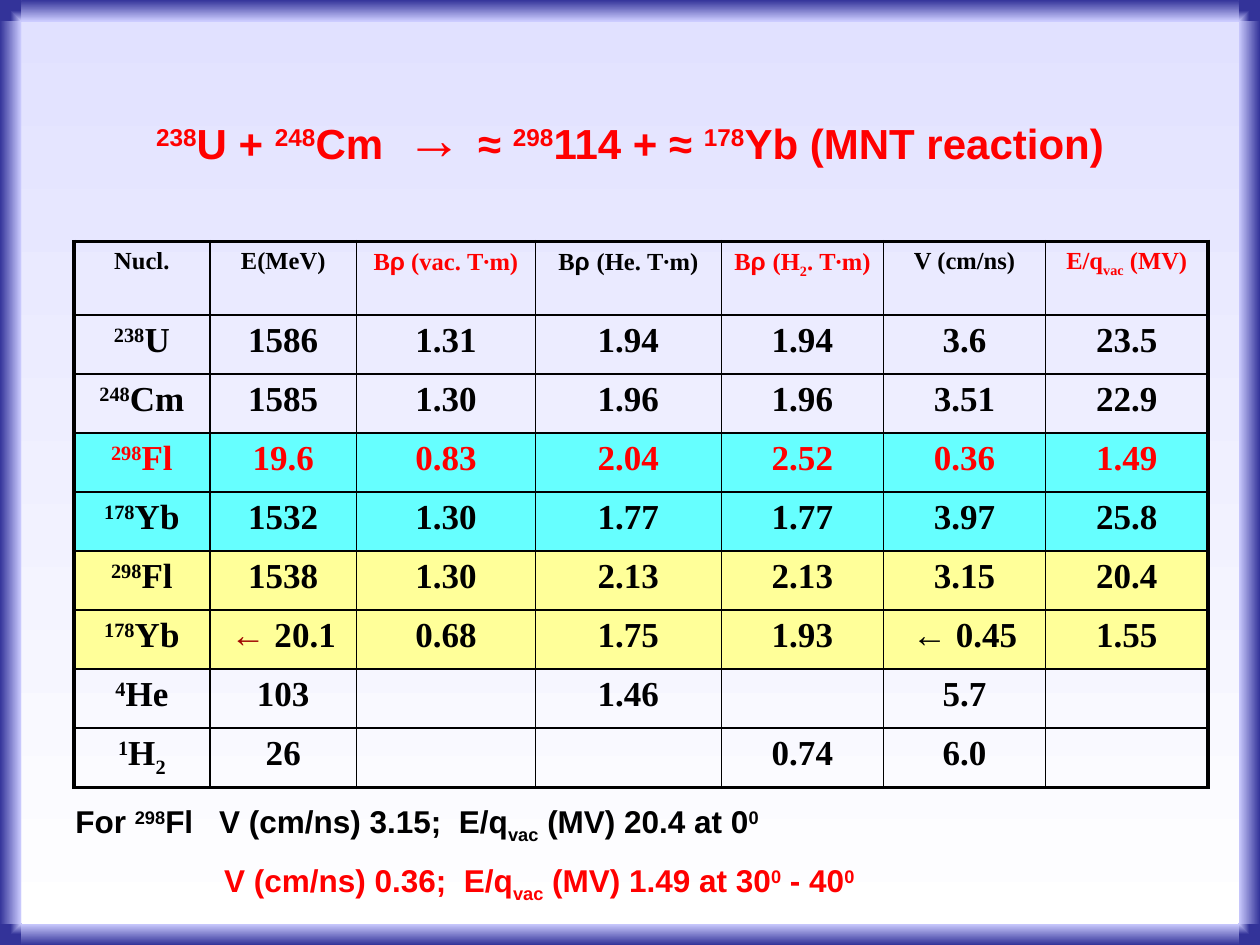
"""Build a slide tabulating kinematics of a multinucleon transfer reaction."""
import dataclasses
import itertools

import lxml.etree
import pptx
import pptx.dml.color
import pptx.enum.shapes
import pptx.enum.text
import pptx.oxml.ns
import pptx.util

Cm = pptx.util.Cm
Pt = pptx.util.Pt
qn = pptx.oxml.ns.qn
ALIGN = pptx.enum.text.PP_ALIGN
ANCHOR = pptx.enum.text.MSO_ANCHOR


@dataclasses.dataclass(frozen=True)
class Theme:
    """Hold the colours, fonts and type sizes of the slide."""
    black: str = "000000"
    red: str = "FF0000"
    dark_red: str = "9F0703"
    cyan: str = "66FFFF"
    yellow: str = "FFFF99"
    navy: str = "333399"
    lilac: str = "CCCCFF"
    sky: str = "E1E1FF"
    white: str = "FFFFFF"
    sans: str = "Arial"
    serif: str = "Times New Roman"
    title: int = 24
    arrow: int = 32
    header: int = 14
    value: int = 20
    note: int = 18
    thin: float = 1
    thick: float = 2.25


THEME = Theme()
WIDTH, HEIGHT, FRAME = 25.4, 19.05, 0.43
COLUMN_WIDTHS = [2.74, 2.96, 3.6, 3.75, 3.27, 3.27, 3.27]
HEADER_HEIGHT, ROW_HEIGHT = 1.48, 1.19

REACTION = "^238|U + |^248|Cm  |#→ |≈ |^298|114 + ≈ |^178|Yb (MNT reaction)"
HEADERS = [
    ("Nucl.", THEME.black),
    ("Е(МeV)", THEME.black),
    ("B|~ρ| (vac. Т∙m)", THEME.red),
    ("B|~ρ |(He. Т∙m)", THEME.black),
    ("B|~ρ |(H|_2|. Т∙m)", THEME.red),
    ("V (cm/ns)", THEME.black),
    ("E/q|_vac| (MV)", THEME.red),
]
NUCLIDES = [
    (["^238|U", "1586", "1.31", "1.94", "1.94", "3.6", "23.5"], THEME.black, None),
    (["^248|Cm", "1585", "1.30", "1.96", "1.96", "3.51", "22.9"], THEME.black, None),
    (["^298|Fl", "19.6", "0.83", "2.04", "2.52", "0.36", "1.49"], THEME.red, THEME.cyan),
    (["^178|Yb", "1532", "1.30", "1.77", "1.77", "3.97", "25.8"], THEME.black, THEME.cyan),
    (["^298|Fl", "1538", "1.30", "2.13", "2.13", "3.15", "20.4"], THEME.black, THEME.yellow),
    (["^178|Yb", "!←| 20.1", "0.68", "1.75", "1.93", "← 0.45", "1.55"],
     THEME.black, THEME.yellow),
    (["^4|He", "103", "", "1.46", "", "5.7", ""], THEME.black, None),
    (["^1|H|_2", "26", "", "", "0.74", "6.0", ""], THEME.black, None),
]
FLIGHT_AT_ZERO = "For |^298|Fl\tV (cm/ns) 3.15;  E/q|_vac| (MV) 20.4 at 0|^0"
FLIGHT_AT_ANGLE = "V (cm/ns) 0.36;  E/q|_vac| (MV) 1.49 at 30|^0| - 40|^0"
MARKS = {
    "^": {"baseline": 30000},
    "_": {"baseline": -25000},
    "~": {"font": THEME.sans},
    "!": {"color": THEME.dark_red},
    "#": {"size": THEME.arrow},
}


def rgb(color):
    """Return a colour object for a hex string."""
    return pptx.dml.color.RGBColor.from_string(color)


def write_text(paragraph, text, **style):
    """Write bold runs split at bars, each with an optional leading format mark."""
    for piece in text.split("|"):
        mark = MARKS.get(piece[:1], {})
        look = {**style, **mark}
        run = paragraph.add_run()
        run.text = piece[1:] if mark else piece
        run.font.name = look["font"]
        run.font.size = Pt(look["size"])
        run.font.bold = True
        run.font.color.rgb = rgb(look["color"])
        if "baseline" in look:
            run.font._element.set("baseline", str(look["baseline"]))


def paint_gradient(fill, start, end, angle):
    """Fill with two colours along a clockwise angle."""
    fill.gradient()
    fill.gradient_angle = -angle % 360
    for stop, color in zip(fill.gradient_stops, (start, end)):
        stop.color.rgb = rgb(color)


def add_frame_part(slide, left, top, width, height, colors, angle=0):
    """Add one gradient rectangle of the frame."""
    part = slide.shapes.add_shape(
        pptx.enum.shapes.MSO_SHAPE.RECTANGLE, *map(Cm, (left, top, width, height)))
    part.shadow.inherit = False
    part.line.fill.background()
    paint_gradient(part.fill, *colors, angle)
    return part


def focus_gradient(corner, at_left, at_top):
    """Turn a corner's gradient towards the middle of the slide."""
    gradient = corner._element.spPr.find(qn("a:gradFill"))
    focus = lxml.etree.Element(qn("a:path"), path="rect")
    left, top = 100000 * at_left, 100000 * at_top
    lxml.etree.SubElement(focus, qn("a:fillToRect"), l=str(left), t=str(top),
                          r=str(100000 - left), b=str(100000 - top))
    gradient.replace(gradient.find(qn("a:lin")), focus)


def add_frame(slide):
    """Add the bevelled frame around the slide."""
    right, bottom = WIDTH - FRAME, HEIGHT - FRAME
    inward, outward = (THEME.navy, THEME.lilac), (THEME.lilac, THEME.navy)
    for left, top in itertools.product((0, right), (0, bottom)):
        corner = add_frame_part(slide, left, top, FRAME, FRAME, outward)
        focus_gradient(corner, left == 0, top == 0)
    for edge, colors in ((0, inward), (bottom, outward)):
        add_frame_part(slide, FRAME, edge, WIDTH - 2 * FRAME, FRAME, colors, 90)
    for edge, colors in ((0, inward), (right, outward)):
        add_frame_part(slide, edge, FRAME, FRAME, HEIGHT - 2 * FRAME, colors)


def set_title(slide):
    """Place the reaction formula in the title placeholder."""
    title = slide.shapes.title
    title.left, title.top, title.width, title.height = map(Cm, (1.9, 1.7, 21.6, 2.12))
    title.text_frame.vertical_anchor = ANCHOR.MIDDLE
    formula = title.text_frame.paragraphs[0]
    formula.alignment = ALIGN.CENTER
    write_text(formula, REACTION, font=THEME.sans, size=THEME.title, color=THEME.red)


def set_borders(cell, **widths):
    """Draw black cell borders, given widths in points by side."""
    properties = cell._tc.get_or_add_tcPr()
    for index, side in enumerate("LRTB"):
        line = lxml.etree.Element(qn(f"a:ln{side}"), w=str(Pt(widths[side])))
        solid = lxml.etree.SubElement(line, qn("a:solidFill"))
        lxml.etree.SubElement(solid, qn("a:srgbClr"), val=THEME.black)
        properties.insert(index, line)


def add_nuclide_table(slide):
    """Add the table of energies, rigidities and velocities."""
    header = [(text, color, THEME.header, None) for text, color in HEADERS]
    body = [[(text, color, THEME.value, fill) for text in values]
            for values, color, fill in NUCLIDES]
    rows = [header, *body]
    heights = [HEADER_HEIGHT] + [ROW_HEIGHT] * len(body)
    table = slide.shapes.add_table(
        len(rows), len(HEADERS), Cm(1.49), Cm(4.87),
        Cm(sum(COLUMN_WIDTHS)), Cm(sum(heights))).table
    table.first_row = table.horz_banding = False
    for column, width in zip(table.columns, COLUMN_WIDTHS):
        column.width = Cm(width)
    for row, height in zip(table.rows, heights):
        row.height = Cm(height)
    last_row, last_column = len(rows) - 1, len(HEADERS) - 1
    for r, c in itertools.product(range(len(rows)), range(len(HEADERS))):
        text, color, size, fill = rows[r][c]
        cell = table.cell(r, c)
        if fill:
            cell.fill.solid()
            cell.fill.fore_color.rgb = rgb(fill)
        else:
            cell.fill.background()
        outer = {"L": c == 0, "R": c == last_column, "T": r == 0, "B": r == last_row}
        set_borders(cell, **{side: THEME.thick if edge else THEME.thin
                             for side, edge in outer.items()})
        if text:
            entry = cell.text_frame.paragraphs[0]
            entry.alignment = ALIGN.CENTER
            write_text(entry, text, font=THEME.serif, size=size, color=color)


def add_flight_notes(slide):
    """Add the two lines on flerovium below the table."""
    frame = slide.shapes.add_textbox(*map(Cm, (1.27, 16.05, 23.93, 2.06))).text_frame
    frame.word_wrap = True
    forward, angled = frame.paragraphs[0], frame.add_paragraph()
    tabs = lxml.etree.SubElement(forward._p.get_or_add_pPr(), qn("a:tabLst"))
    lxml.etree.SubElement(tabs, qn("a:tab"), pos=str(Cm(2.9)), algn="l")
    angled._p.get_or_add_pPr().set("marL", str(Cm(3)))
    angled.space_before = Pt(9)
    style = {"font": THEME.sans, "size": THEME.note}
    write_text(forward, FLIGHT_AT_ZERO, color=THEME.black, **style)
    write_text(angled, FLIGHT_AT_ANGLE, color=THEME.red, **style)


def main():
    """Build and save the slide."""
    deck = pptx.Presentation()
    deck.slide_width, deck.slide_height = Cm(WIDTH), Cm(HEIGHT)
    slide = deck.slides.add_slide(deck.slide_layouts.get_by_name("Title Only"))
    paint_gradient(slide.background.fill, THEME.sky, THEME.white, 90)
    add_frame(slide)
    set_title(slide)
    add_nuclide_table(slide)
    add_flight_notes(slide)
    deck.save("out.pptx")


if __name__ == "__main__":
    main()
